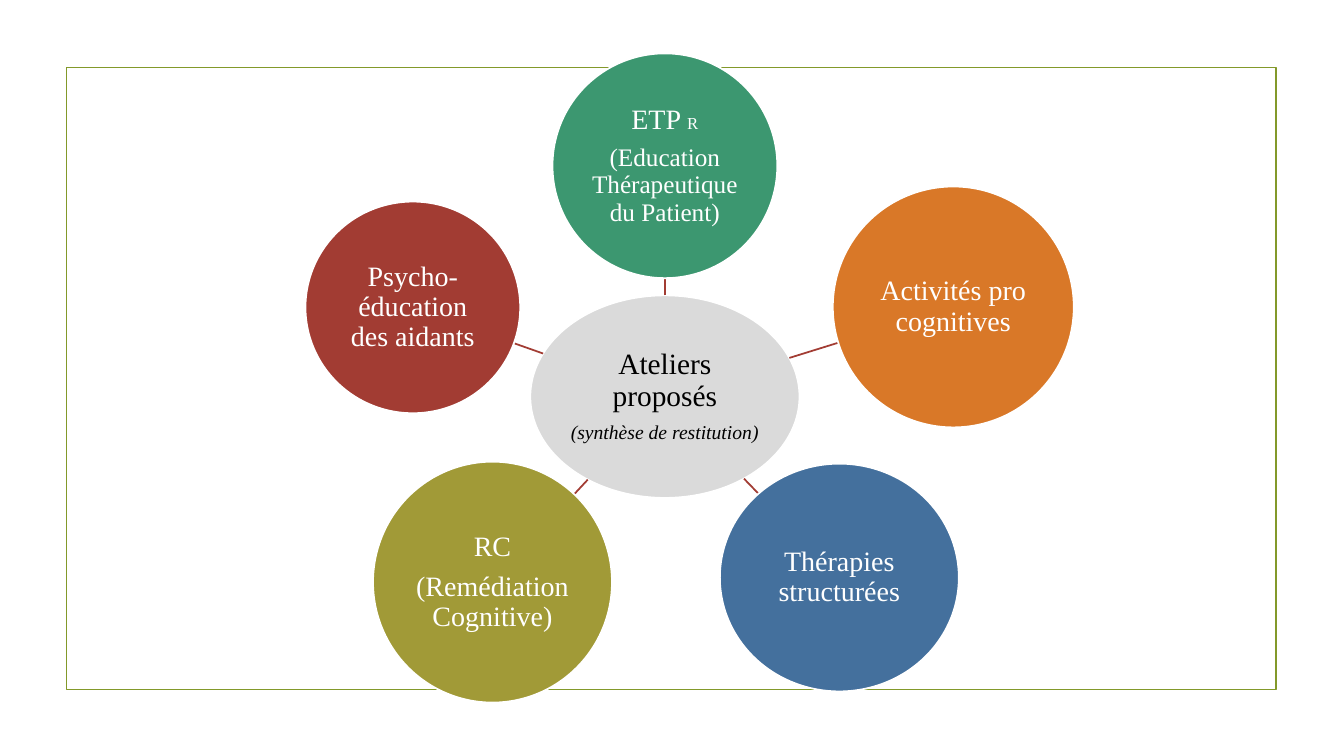
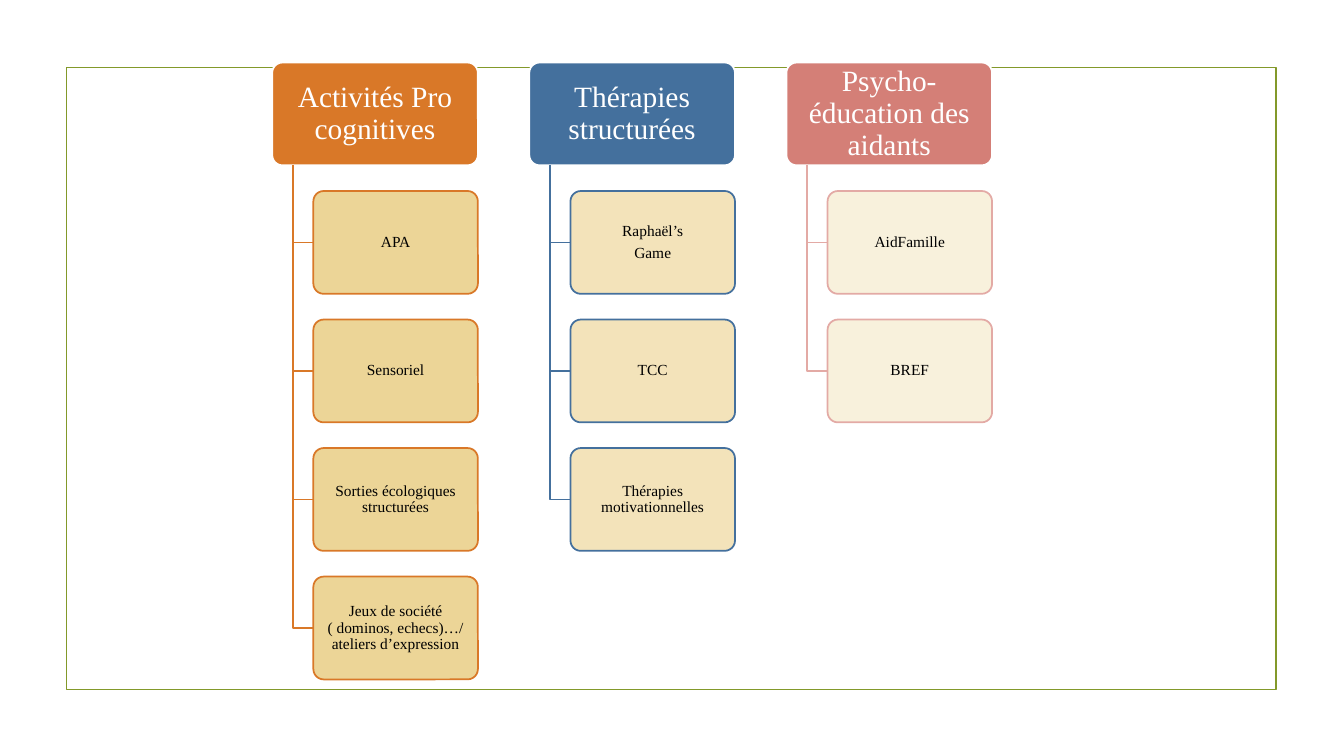
from math import hypot

from lxml.etree import SubElement
from pptx import Presentation
from pptx.dml.color import RGBColor
from pptx.enum.shapes import MSO_CONNECTOR, MSO_SHAPE
from pptx.enum.text import MSO_ANCHOR, PP_ALIGN
from pptx.oxml.ns import qn
from pptx.util import Inches, Pt

# Shared style
FONT = "Times New Roman"
EDGE = Pt(1.25)
WHITE = RGBColor(0xFF, 0xFF, 0xFF)
BLACK = RGBColor(0x00, 0x00, 0x00)
FRAME = RGBColor(0x83, 0x99, 0x2A)
GREY = RGBColor(0xDA, 0xDA, 0xDA)
GREEN = RGBColor(0x3C, 0x97, 0x70)
ORANGE = RGBColor(0xD9, 0x78, 0x28)
BLUE = RGBColor(0x44, 0x70, 0x9D)
OLIVE = RGBColor(0xA1, 0x9A, 0x37)
RED = RGBColor(0xA2, 0x3C, 0x33)
PINK = RGBColor(0xD4, 0x7F, 0x77)
ROSE = RGBColor(0xE3, 0xAA, 0xA5)
SAND = RGBColor(0xEB, 0xD1, 0x8C)
CREAM = RGBColor(0xF2, 0xE1, 0xB3)
IVORY = RGBColor(0xF8, 0xF0, 0xD9)

# Hub and its circles: box, fill, paragraphs of (text, size) runs
HUB = (5.26, 2.93, 2.67, 2.01)
HUB_TEXT = [[("Ateliers proposés", 21)], [("(synthèse de restitution)", 14)]]
CIRCLES = [
    ((5.48, 0.53, 2.23, 2.23), GREEN,
     [[("ETP ", 20), ("R", 12)],
      [("(Education Thérapeutique du Patient)", 18)]]),
    ((8.26, 1.85, 2.39, 2.39), ORANGE, [[("Activités pro cognitives", 20)]]),
    ((7.14, 4.6, 2.37, 2.26), BLUE, [[("Thérapies structurées", 20)]]),
    ((3.7, 4.58, 2.37, 2.39), OLIVE,
     [[("RC", 20)], [("(Remédiation Cognitive)", 20)]]),
    ((3.03, 2, 2.13, 2.1), RED, [[("Psycho-éducation des aidants", 20)]]),
]

# Columns: heading, its fill, branch colour, item fill, items
COLUMNS = [
    ("Activités Pro cognitives", ORANGE, ORANGE, SAND,
     [["APA"], ["Sensoriel"], ["Sorties écologiques structurées"],
      ["Jeux de société ( dominos, echecs)…/ ateliers d’expression"]]),
    ("Thérapies structurées", BLUE, BLUE, CREAM,
     [["Raphaël’s", "Game"], ["TCC"], ["Thérapies motivationnelles"]]),
    ("Psycho-éducation des aidants", PINK, ROSE, IVORY,
     [["AidFamille"], ["BREF"]]),
]
LEFT, TOP = 2.7, 0.62
WIDE, TALL = 2.04, 1.02
STEP_X, STEP_Y = WIDE * 1.25, TALL * 1.25
INDENT = WIDE / 5


def add_box(slide, kind, box, fill, edge):
    shape = slide.shapes.add_shape(kind, *map(Inches, box))
    shape.shadow.inherit = False
    if fill is None:
        shape.fill.background()
    else:
        shape.fill.solid()
        shape.fill.fore_color.rgb = fill
    shape.line.color.rgb = edge
    shape.line.width = EDGE
    return shape


def add_card(slide, box, fill, edge):
    card = add_box(slide, MSO_SHAPE.ROUNDED_RECTANGLE, box, fill, edge)
    card.adjustments[0] = 0.1
    return card


def set_text(shape, lines, color, inset):
    frame = shape.text_frame
    frame.word_wrap = True
    frame.vertical_anchor = MSO_ANCHOR.MIDDLE
    frame.margin_left = frame.margin_right = Inches(inset)
    frame.margin_top = frame.margin_bottom = Inches(inset)
    for row, parts in enumerate(lines):
        para = frame.add_paragraph() if row else frame.paragraphs[0]
        para.alignment = PP_ALIGN.CENTER
        para.line_spacing = 0.9
        if row:
            para.space_before = Pt(round(0.35 * lines[row - 1][0][1]))
        for text, size in parts:
            run = para.add_run()
            run.text = text
            run.font.name = FONT
            run.font.size = Pt(size)
            run.font.color.rgb = color


def set_alpha(shape, percent):
    color = shape.element.spPr.find(qn("a:solidFill"))[0]
    SubElement(color, qn("a:alpha")).set("val", str(percent * 1000))


def center(box):
    left, top, width, height = box
    return left + width / 2, top + height / 2


def rim(box, goal):
    """Point on the oval's edge, on the way from its centre to the goal."""
    x, y = center(box)
    dx, dy = goal[0] - x, goal[1] - y
    part = 1 / hypot(dx / (box[2] / 2), dy / (box[3] / 2))
    return x + dx * part, y + dy * part


def add_spoke(slide, box):
    ends = rim(HUB, center(box)) + rim(box, center(HUB))
    spoke = slide.shapes.add_connector(MSO_CONNECTOR.STRAIGHT,
                                       *map(Inches, ends))
    spoke.line.color.rgb = RED
    spoke.line.width = EDGE
    SubElement(spoke.element.spPr, qn("a:effectLst"))


def add_branch(slide, left, top, right, bottom, color):
    pen = slide.shapes.build_freeform(Inches(left), Inches(top))
    pen.add_line_segments([(Inches(left), Inches(bottom)),
                           (Inches(right), Inches(bottom))], close=False)
    branch = pen.convert_to_shape()
    branch.shadow.inherit = False
    branch.fill.background()
    branch.line.color.rgb = color
    branch.line.width = EDGE


def add_frame(slide):
    """Put the border on the layout, so that every slide shows it."""
    border = add_box(slide, MSO_SHAPE.RECTANGLE, (0.66, 0.67, 12, 6.17),
                     None, FRAME)
    border.element.nvSpPr.cNvPr.set("id", "99")
    slide.slide_layout.shapes.element.insert(2, border.element)


def add_wheel(slide):
    hub = add_box(slide, MSO_SHAPE.OVAL, HUB, GREY, WHITE)
    set_text(hub, HUB_TEXT, BLACK, 0.01)
    hub.text_frame.paragraphs[1].runs[0].font.italic = True
    for box, fill, lines in CIRCLES:
        add_spoke(slide, box)
        circle = add_box(slide, MSO_SHAPE.OVAL, box, fill, WHITE)
        set_text(circle, lines, WHITE, 0.01)


def add_column(slide, left, title, fill, edge, tint, items):
    head = add_card(slide, (left, TOP, WIDE, TALL), fill, WHITE)
    set_text(head, [[(title, 21)]], WHITE, 0.03)
    for row, lines in enumerate(items, 1):
        top = TOP + row * STEP_Y
        side = left + INDENT
        add_branch(slide, left + INDENT / 2, TOP + TALL, side,
                   top + TALL / 2, edge)
        card = add_card(slide, (side, top, WIDE - INDENT, TALL), tint, edge)
        set_alpha(card, 90)
        set_text(card, [[(line, 11)] for line in lines], BLACK, 0.02)


def main():
    deck = Presentation()
    deck.slide_width, deck.slide_height = Inches(13.33), Inches(7.5)
    blank = deck.slide_layouts[6]

    # Slide 1: workshops around the hub
    wheel = deck.slides.add_slide(blank)
    add_frame(wheel)
    add_wheel(wheel)

    # Slide 2: detail by workshop
    detail = deck.slides.add_slide(blank)
    for place, column in enumerate(COLUMNS):
        add_column(detail, LEFT + place * STEP_X, *column)

    deck.save("out.pptx")


if __name__ == "__main__":
    main()
